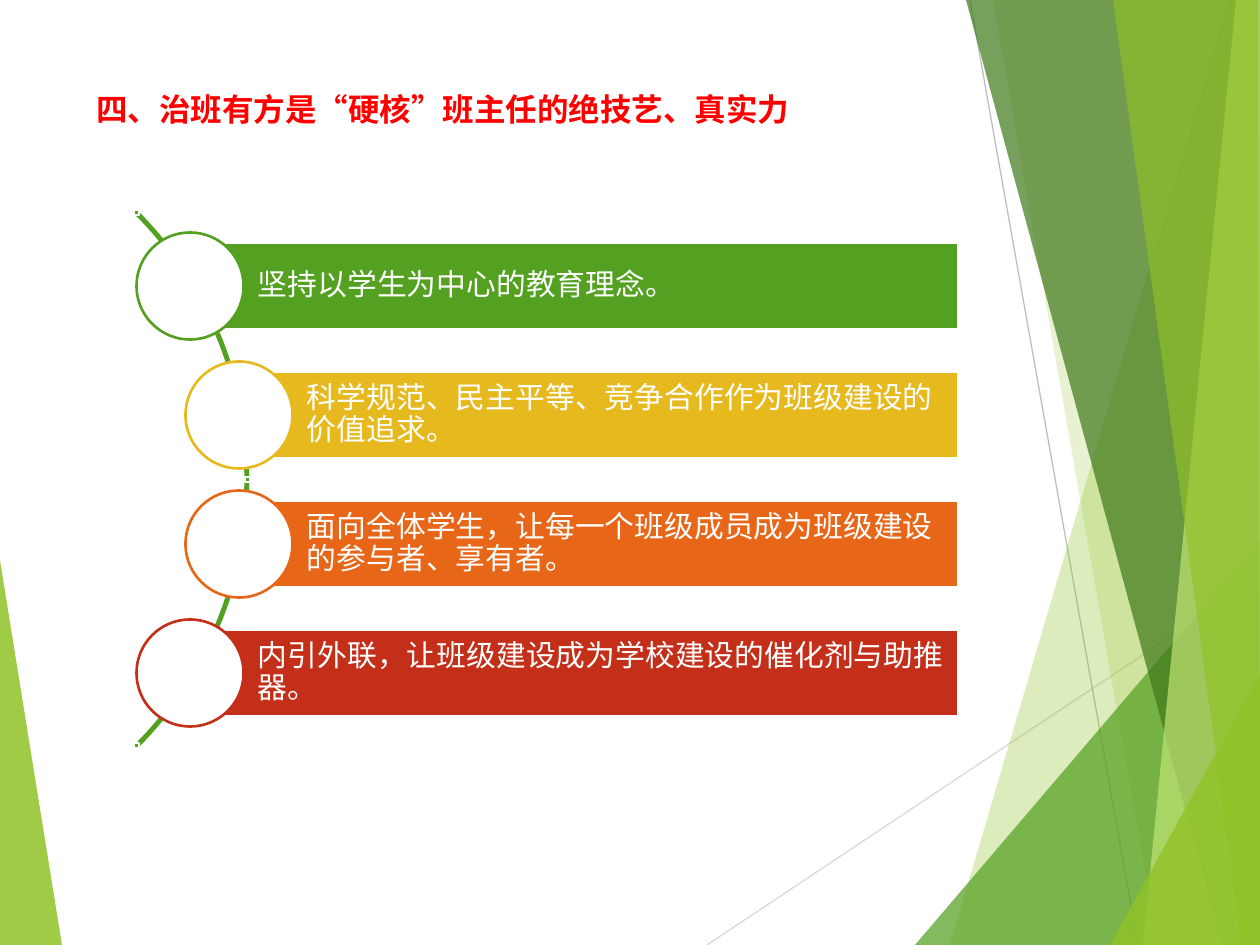
import pptx
import pptx.util
import pptx.dml.color
import pptx.enum.shapes
import pptx.enum.text
import pptx.oxml.ns
from lxml import etree

RGBColor = pptx.dml.color.RGBColor
SHAPE = pptx.enum.shapes.MSO_SHAPE
ANCHOR = pptx.enum.text.MSO_ANCHOR
ALIGN = pptx.enum.text.PP_ALIGN
Pt = pptx.util.Pt
qn = pptx.oxml.ns.qn

PX = 914400 / 126
WIDTH, HEIGHT = 1260, 945
FONT = "Lato"

WHITE = RGBColor(0xFF, 0xFF, 0xFF)
RED = RGBColor(0xFF, 0x00, 0x00)
LIME = RGBColor(0x90, 0xC2, 0x26)
GREEN = RGBColor(0x54, 0xA0, 0x21)
DARK_GREEN = RGBColor(0x3F, 0x78, 0x19)
PALE_LIME = RGBColor(0xC0, 0xE4, 0x74)
YELLOW = RGBColor(0xE6, 0xB9, 0x1E)
ORANGE = RGBColor(0xE7, 0x66, 0x18)
BRICK = RGBColor(0xC4, 0x2F, 0x1A)
LIGHT_GREY = RGBColor(0xD9, 0xD9, 0xD9)
GREY = RGBColor(0xBF, 0xBF, 0xBF)


def px(*lengths):
    return [round(length * PX) for length in lengths]


def add_outlined(kind, box, fill, line):
    shape = slide.shapes.add_shape(kind, *px(*box))
    shape.shadow.inherit = False
    if fill is None:
        shape.fill.background()
    else:
        shape.fill.solid()
        shape.fill.fore_color.rgb = fill
    shape.line.color.rgb = line
    shape.line.width = Pt(1.5)
    return shape


prs = pptx.Presentation()
prs.slide_width, prs.slide_height = px(WIDTH, HEIGHT)
slide = prs.slides.add_slide(prs.slide_layouts[6])

# Thin crossing lines behind the facets
for start, end, colour in [
    ((707, 945), (1260, 577), LIGHT_GREY),
    ((970, 0), (1138, 945), GREY),
]:
    ray = slide.shapes.add_connector(
        pptx.enum.shapes.MSO_CONNECTOR.STRAIGHT, *px(*start, *end))
    ray.line.color.rgb = colour
    ray.line.width = Pt(0.75)
    etree.SubElement(ray._element.spPr, qn("a:effectLst"))

# Translucent facets: outline, colour, opacity in percent
top_right, bottom_right = (WIDTH, 0), (WIDTH, HEIGHT)
facets = [
    ([(0, 560), (62, 945), (0, 945)], LIME, 85),
    ([(1228, 0), (950, 945), bottom_right, top_right], LIME, 30),
    ([(993, 0), (1158, 945), bottom_right, top_right], LIME, 20),
    ([(915, 945), (1260, 541), bottom_right], GREEN, 72),
    ([(966, 0), (1222, 945), bottom_right, top_right], DARK_GREEN, 70),
    ([(1236, 0), (1143, 945), bottom_right, top_right], PALE_LIME, 70),
    ([(1113, 0), (1242, 945), bottom_right, (1258, 0)], LIME, 65),
    ([(1110, 945), (1260, 674), bottom_right], LIME, 80),
]
for corners, colour, opacity in facets:
    outline = slide.shapes.build_freeform(*corners[0], scale=PX)
    outline.add_line_segments(corners[1:], close=True)
    facet = outline.convert_to_shape()
    facet.shadow.inherit = False
    facet.fill.solid()
    facet.fill.fore_color.rgb = colour
    facet.line.fill.background()
    tint = facet._element.spPr.find(qn("a:solidFill"))[0]
    etree.SubElement(tint, qn("a:alpha"), val=str(opacity * 1000))

# Title
title = slide.shapes.add_textbox(*px(84, 84, 875, 73))
title.text_frame.word_wrap = True
heading = title.text_frame.paragraphs[0]
heading.text = "四、治班有方是“硬核”班主任的绝技艺、真实力"
heading.font.name = FONT
heading.font.size = Pt(18)
heading.font.bold = True
heading.font.color.rgb = RED

# Arc that carries the four principles
arc = add_outlined(SHAPE.BLOCK_ARC, (-509, 101, 757, 757), None, GREEN)
for index, value in enumerate((189, 27, 0.003)):
    arc.adjustments[index] = value

# Principles: a bar with its circle centred on the bar's left end
BAR_TOP, BAR_PITCH, BAR_HEIGHT, BAR_RIGHT = 243, 129, 86, 958
CIRCLE = 107
principles = [
    (190, GREEN, "坚持以学生为中心的教育理念。"),
    (239, YELLOW, "科学规范、民主平等、竞争合作作为班级建设的价值追求。"),
    (239, ORANGE, "面向全体学生，让每一个班级成员成为班级建设的参与者、享有者。"),
    (190, BRICK, "内引外联，让班级建设成为学校建设的催化剂与助推器。"),
]
for row, (left, colour, wording) in enumerate(principles):
    top = BAR_TOP + row * BAR_PITCH
    bar = add_outlined(
        SHAPE.RECTANGLE, (left, top, BAR_RIGHT - left, BAR_HEIGHT), colour, WHITE)
    frame = bar.text_frame
    frame.word_wrap = True
    frame.vertical_anchor = ANCHOR.MIDDLE
    (frame.margin_left, frame.margin_top,
     frame.margin_right, frame.margin_bottom) = px(68, 6, 6, 6)
    principle = frame.paragraphs[0]
    principle.text = wording
    principle.alignment = ALIGN.LEFT
    principle.line_spacing = 0.9
    principle.font.name = FONT
    principle.font.size = Pt(17)
    principle.font.color.rgb = WHITE
    circle_top = top + (BAR_HEIGHT - CIRCLE) / 2
    add_outlined(
        SHAPE.OVAL, (left - CIRCLE / 2, circle_top, CIRCLE, CIRCLE), WHITE, colour)

# Small markers at the ends and middle of the arc
for left, top in [(134, 210), (245, 477), (134, 743)]:
    add_outlined(SHAPE.RECTANGLE, (left, top, 5, 5), GREEN, WHITE)

prs.save("out.pptx")
